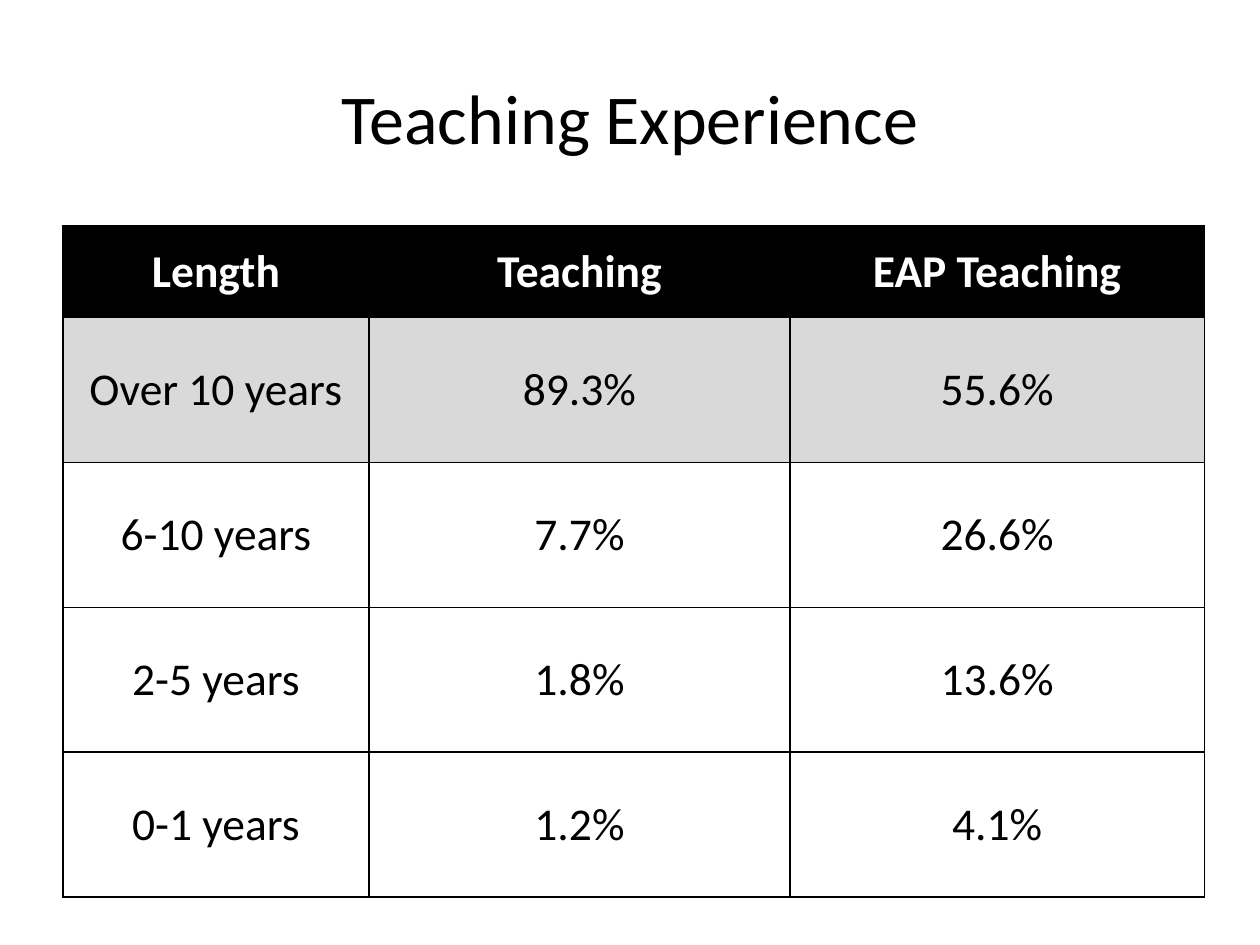
from lxml import etree
from pptx import Presentation
from pptx.dml.color import RGBColor
from pptx.enum.text import MSO_ANCHOR, PP_ALIGN
from pptx.oxml.ns import qn
from pptx.util import Inches, Pt

BLACK = RGBColor(0x00, 0x00, 0x00)
WHITE = RGBColor(0xFF, 0xFF, 0xFF)
GREY = RGBColor(0xD9, 0xD9, 0xD9)
CENTER = PP_ALIGN.CENTER
MIDDLE = MSO_ANCHOR.MIDDLE

TITLE_ONLY_LAYOUT = 5
FONT = "Calibri"
COLUMN_WIDTHS = [2.43, 3.34, 3.29]
ROW_HEIGHTS = [0.73] + [1.15] * 4
ROW_FILLS = [BLACK, GREY, WHITE, WHITE, WHITE]
EXPERIENCE = [
    ["Length", "Teaching", "EAP Teaching"],
    ["Over 10 years", "89.3%", "55.6%"],
    ["6-10 years", "7.7%", "26.6%"],
    ["2-5 years", "1.8%", "13.6%"],
    ["0-1 years", "1.2%", "4.1%"],
]


def write_text(text_frame, text, size, color=BLACK, bold=False):
    paragraph = text_frame.paragraphs[0]
    paragraph.alignment = CENTER
    run = paragraph.add_run()
    run.text = text
    run.font.name = FONT
    run.font.size = Pt(size)
    run.font.bold = bold
    run.font.color.rgb = color


def add_title(slide, text):
    title = slide.shapes.title
    title.left, title.top = Inches(0.5), Inches(0.3)
    title.width, title.height = Inches(9), Inches(1.25)
    title.text_frame.vertical_anchor = MIDDLE
    write_text(title.text_frame, text, size=40)


def set_borders(cell, color=BLACK, width=1):
    """Line all four sides; borders must precede the fill in the cell XML."""
    properties = cell._tc.get_or_add_tcPr()
    for index, side in enumerate(("a:lnL", "a:lnR", "a:lnT", "a:lnB")):
        line = etree.Element(qn(side), w=str(Pt(width)))
        fill = etree.SubElement(line, qn("a:solidFill"))
        etree.SubElement(fill, qn("a:srgbClr"), val=str(color))
        properties.insert(index, line)


def add_experience_table(slide, rows):
    table = slide.shapes.add_table(
        len(rows), len(rows[0]), Inches(0.5), Inches(1.79),
        Inches(sum(COLUMN_WIDTHS)), Inches(sum(ROW_HEIGHTS)),
    ).table
    for column, width in zip(table.columns, COLUMN_WIDTHS):
        column.width = Inches(width)
    for row_index, (row, height) in enumerate(zip(table.rows, ROW_HEIGHTS)):
        row.height = Inches(height)
        is_header = row_index == 0
        for cell, text in zip(row.cells, rows[row_index]):
            cell.vertical_anchor = MIDDLE
            cell.fill.solid()
            cell.fill.fore_color.rgb = ROW_FILLS[row_index]
            set_borders(cell)
            write_text(cell.text_frame, text, size=26,
                       color=WHITE if is_header else BLACK, bold=is_header)


def main():
    presentation = Presentation()
    presentation.slide_width = Inches(10)
    presentation.slide_height = Inches(7.5)
    layout = presentation.slide_layouts[TITLE_ONLY_LAYOUT]
    slide = presentation.slides.add_slide(layout)
    add_title(slide, "Teaching Experience")
    add_experience_table(slide, EXPERIENCE)
    presentation.save("out.pptx")


if __name__ == "__main__":
    main()
